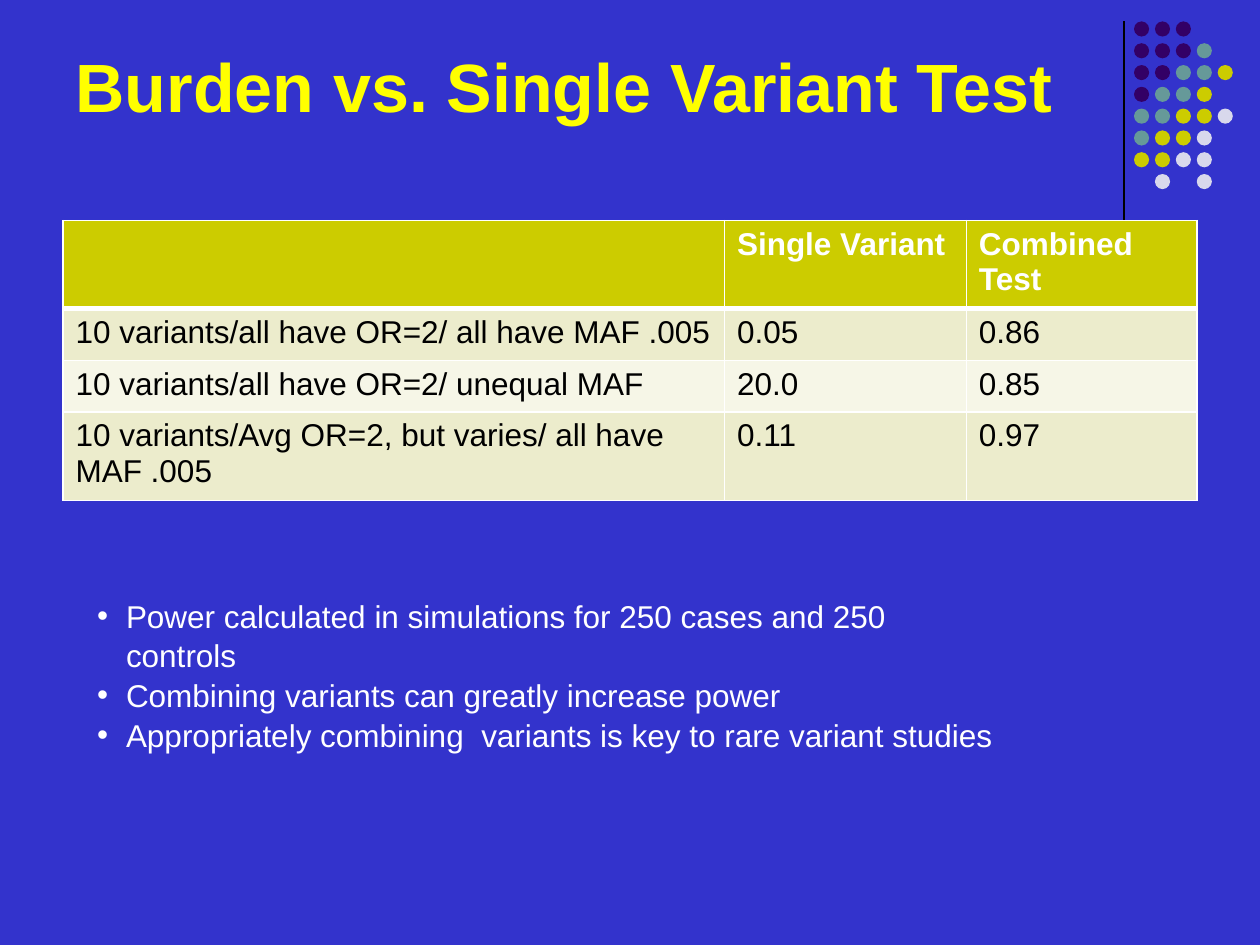
from dataclasses import dataclass

from lxml.etree import SubElement
from pptx import Presentation
from pptx.dml.color import RGBColor
from pptx.enum.shapes import MSO_CONNECTOR as Connector, MSO_SHAPE as Shape
from pptx.enum.text import MSO_ANCHOR as Anchor, MSO_AUTO_SIZE as AutoSize, PP_ALIGN as Align
from pptx.oxml.ns import qn
from pptx.util import Inches, Pt

COLORS = {
    "background": "3333CC", "title": "FFFF00", "white": "FFFFFF", "black": "000000",
    "purple": "330066", "teal": "669999", "olive": "CCCC00", "lilac": "D8D8EC",
    "odd_row": "ECECCC", "even_row": "F6F6E7",
}
DOT_COLORS = {"P": "purple", "T": "teal", "O": "olive", "L": "lilac"}
DOT_ROWS = ["PPP", "PPPT", "PPTTO", "PTTO", "TTOOL", "TOOL", "OOLL", " L L"]

POWER_ROWS = [
    ("", "Single Variant", "Combined Test"),
    ("10 variants/all have OR=2/ all have MAF .005", "0.05", "0.86"),
    ("10 variants/all have OR=2/ unequal MAF", "20.0", "0.85"),
    ("10 variants/Avg OR=2, but varies/ all have MAF .005", "0.11", "0.97"),
]
COLUMN_WIDTHS = [5.25, 1.92, 1.83]
ROW_HEIGHT = 0.41
FINDINGS = [
    "Power calculated in simulations for 250 cases and 250 controls",
    "Combining variants can greatly increase power",
    "Appropriately combining  variants is key to rare variant studies",
]


@dataclass(frozen=True)
class Box:
    left: float
    top: float
    width: float
    height: float

    def emu(self) -> tuple:
        return tuple(Inches(n) for n in (self.left, self.top, self.width, self.height))


@dataclass(frozen=True)
class DotGrid:
    left: float = 9.0
    top: float = 0.17
    column: float = 0.166
    row: float = 0.173
    size: float = 0.12

    def cell(self, column: int, row: int) -> Box:
        return Box(self.left + column * self.column, self.top + row * self.row,
                   self.size, self.size)


TITLE_BOX = Box(0.5, 0.3, 9, 1.25)
TABLE_BOX = Box(0.5, 1.75, 9, 2.21)
LIST_BOX = Box(0.67, 4.67, 7.33, 1.01)


def rgb(name: str) -> RGBColor:
    return RGBColor.from_string(COLORS[name])


def apply(target, **values) -> None:
    for key, value in values.items():
        setattr(target, key, value)


def style_font(font, size: float, color: str, bold: bool = False) -> None:
    apply(font, name="Arial", size=Pt(size), bold=bold)
    font.color.rgb = rgb(color)


def place(shape, box: Box) -> None:
    apply(shape, **dict(zip(("left", "top", "width", "height"), box.emu())))


def draw_ornament(slide, grid: DotGrid) -> None:
    rule = slide.shapes.add_connector(
        Connector.STRAIGHT, Inches(8.92), Inches(0.17), Inches(8.92), Inches(1.83))
    rule.line.width = Pt(0.75)
    rule.line.color.rgb = rgb("black")
    SubElement(rule._element.spPr, qn("a:effectLst"))
    dots = slide.shapes.add_group_shape()
    for row, codes in enumerate(DOT_ROWS):
        for column, code in enumerate(codes):
            if code == " ":
                continue
            dot = dots.shapes.add_shape(Shape.OVAL, *grid.cell(column, row).emu())
            dot.shadow.inherit = False
            dot.fill.solid()
            dot.fill.fore_color.rgb = rgb(DOT_COLORS[code])
            dot.line.fill.background()


def add_borders(cell, widths: dict[str, float]) -> None:
    """Draw white borders, with widths in points keyed by side in schema order."""
    properties = cell._tc.get_or_add_tcPr()
    for side, width in widths.items():
        line = SubElement(properties, qn(f"a:ln{side}"), w=str(Pt(width)))
        fill = SubElement(line, qn("a:solidFill"))
        SubElement(fill, qn("a:srgbClr"), val=COLORS["white"])


def draw_power_table(slide) -> None:
    frame = slide.shapes.add_table(len(POWER_ROWS), len(COLUMN_WIDTHS), *TABLE_BOX.emu())
    table = frame.table
    for column, width in zip(table.columns, COLUMN_WIDTHS):
        column.width = Inches(width)
    for index, values in enumerate(POWER_ROWS):
        table.rows[index].height = Inches(ROW_HEIGHT)
        header = index == 0
        fill = "olive" if header else "odd_row" if index % 2 else "even_row"
        borders = {"L": 1, "R": 1, "T": 3 if index == 1 else 1, "B": 3 if header else 1}
        for cell, value in zip(table.rows[index].cells, values):
            add_borders(cell, borders)
            cell.fill.solid()
            cell.fill.fore_color.rgb = rgb(fill)
            cell.text = value
            style_font(cell.text_frame.paragraphs[0].font, 18,
                       "white" if header else "black", header)
    frame.height = Inches(TABLE_BOX.height)


def fill_title(title) -> None:
    place(title, TITLE_BOX)
    apply(title.text_frame, text="Burden vs. Single Variant Test", word_wrap=True,
          vertical_anchor=Anchor.TOP, auto_size=AutoSize.NONE)
    heading = title.text_frame.paragraphs[0]
    heading.alignment = Align.LEFT
    style_font(heading.runs[0].font, 39, "title", True)


def fill_findings(body) -> None:
    place(body, LIST_BOX)
    apply(body.text_frame, text="\n".join(FINDINGS), word_wrap=True,
          vertical_anchor=Anchor.TOP, auto_size=AutoSize.SHAPE_TO_FIT_TEXT)
    hanging = Inches(0.23)
    for finding in body.text_frame.paragraphs:
        apply(finding, space_before=Pt(0), space_after=Pt(0), line_spacing=1.05)
        properties = finding._p.get_or_add_pPr()
        properties.set("marL", str(hanging))
        properties.set("indent", str(-hanging))
        SubElement(properties, qn("a:buChar"), char="•")
        style_font(finding.runs[0].font, 18, "white")


def main() -> None:
    deck = Presentation()
    apply(deck, slide_width=Inches(10), slide_height=Inches(7.5))
    slide = deck.slides.add_slide(deck.slide_layouts[1])
    slide.background.fill.solid()
    slide.background.fill.fore_color.rgb = rgb("background")
    fill_title(slide.shapes.title)
    fill_findings(slide.placeholders[1])
    draw_ornament(slide, DotGrid())
    draw_power_table(slide)
    deck.save("out.pptx")


if __name__ == "__main__":
    main()
